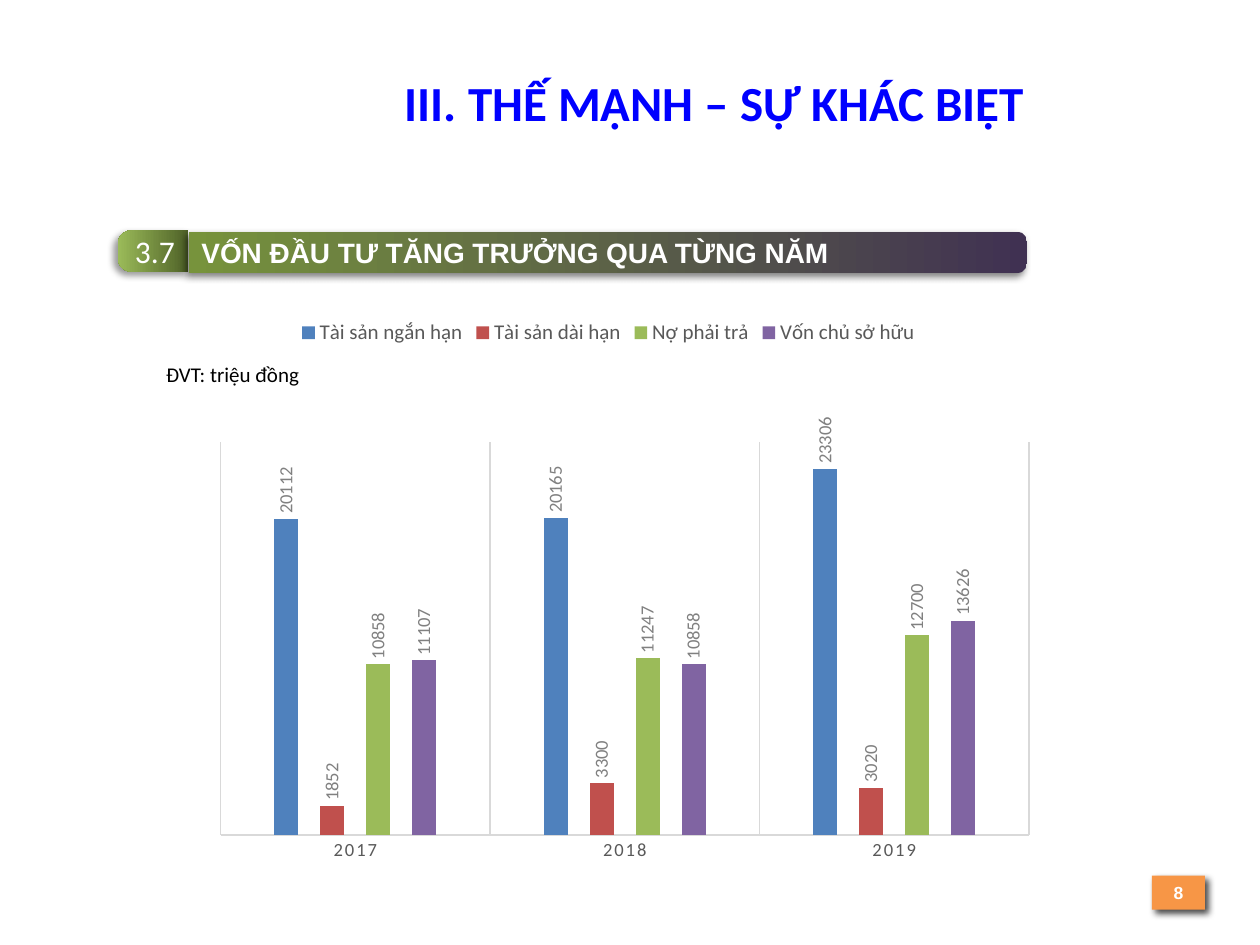
import pptx
import pptx.chart.data
import pptx.dml.color
import pptx.enum.chart
import pptx.enum.shapes
import pptx.enum.text
import pptx.oxml
import pptx.oxml.ns
import pptx.util
from pptx.util import Cm, Pt

COLOURS = {
    "title": "0000FF", "black": "000000", "white": "FFFFFF",
    "dark_green": "4F6228", "green": "9BBB59",
    "purple": "403152", "olive": "77933C", "orange": "F79646",
    "axis_text": "595959", "label_text": "808080", "rule": "D9D9D9",
}
TITLE = "III. THẾ MẠNH – SỰ KHÁC BIỆT"
UNIT = "ĐVT: triệu đồng"
PAGE = "8"
BANNER_HEIGHT = 0.84
BANNERS = [
    dict(text="3.7", left=2.37, top=4.64, length=1.42, turn=270, vert="vert",
         corner=0.347, stops=("dark_green", "green"), opacity=40,
         font=dict(size=18, align="CENTER")),
    dict(text="VỐN ĐẦU TƯ TĂNG TRƯỞNG QUA TỪNG NĂM", left=3.81, top=4.67,
         length=16.89, turn=90, vert="vert270",
         corner=0.233, stops=("purple", "olive"), opacity=50,
         font=dict(size=16, name="Arial", bold=True)),
]
YEARS = ["2017", "2018", "2019"]
CAPITAL = [
    ("Tài sản ngắn hạn", (20112, 20165, 23306), "4F81BD"),
    ("Tài sản dài hạn", (1852, 3300, 3020), "C0504D"),
    ("Nợ phải trả", (10858, 11247, 12700), "9BBB59"),
    ("Vốn chủ sở hữu", (11107, 10858, 13626), "8064A2"),
]
PLOT_AREA = {"x": 0.064, "y": 0.239, "w": 0.909, "h": 0.69}


def rgb(value):
    return pptx.dml.color.RGBColor.from_string(COLOURS.get(value, value))


def style_font(font, size, colour, name="Calibri", bold=False):
    font.size, font.name, font.bold = Pt(size), name, bold
    font.color.rgb = rgb(colour)


def write(shape, text, size, colour="white", name="Calibri", bold=False,
          align="LEFT", anchor="MIDDLE", wrap=True):
    frame = shape.text_frame
    frame.word_wrap = wrap
    frame.auto_size = pptx.enum.text.MSO_AUTO_SIZE.NONE
    frame.vertical_anchor = getattr(pptx.enum.text.MSO_ANCHOR, anchor)
    paragraph = frame.paragraphs[0]
    paragraph.alignment = getattr(pptx.enum.text.PP_ALIGN, align)
    run = paragraph.add_run()
    run.text = text
    style_font(run.font, size, colour, name, bold)


def add_shadow(shape, opacity, direction):
    shape.shadow.inherit = False
    effects = shape._element.spPr.find(pptx.oxml.ns.qn("a:effectLst"))
    effects.append(pptx.oxml.parse_xml(
        f'<a:outerShdw {pptx.oxml.ns.nsdecls("a")} blurRad="{Pt(4)}" dist="{Pt(3)}" '
        f'dir="{direction * 60000}" algn="ctr" rotWithShape="0">'
        f'<a:srgbClr val="{COLOURS["black"]}"><a:alpha val="{opacity * 1000}"/>'
        '</a:srgbClr></a:outerShdw>'))


def add_banner(slide, text, left, top, length, turn, vert, corner, stops, opacity, font):
    """Stand a two-corner shape on its side; left, top and length are as seen."""
    inset = (length - BANNER_HEIGHT) / 2
    banner = slide.shapes.add_shape(
        pptx.enum.shapes.MSO_SHAPE.ROUND_2_SAME_RECTANGLE,
        Cm(left + inset), Cm(top - inset), Cm(BANNER_HEIGHT), Cm(length))
    banner.rotation = turn
    banner.adjustments[0] = corner
    banner.adjustments[1] = 0
    banner.line.fill.background()
    banner.fill.gradient()
    banner.fill.gradient_angle = 360 - turn
    for stop, position, colour in zip(banner.fill.gradient_stops, (0, 1), stops):
        stop.position = position
        stop.color.rgb = rgb(colour)
    add_shadow(banner, opacity, 135)
    write(banner, text, **font)
    frame = banner.text_frame
    frame.margin_left = frame.margin_right = Cm(0.25)
    frame.margin_top = frame.margin_bottom = Cm(0.25)
    frame._txBody.bodyPr.set("vert", vert)


def place_plot_area(chart):
    plot_area = chart._chartSpace.chart.plotArea
    for layout in plot_area.findall(pptx.oxml.ns.qn("c:layout")):
        plot_area.remove(layout)
    modes = '<c:xMode val="edge"/><c:yMode val="edge"/>'
    sizes = "".join(f'<c:{key} val="{value}"/>' for key, value in PLOT_AREA.items())
    plot_area.insert(0, pptx.oxml.parse_xml(
        f'<c:layout {pptx.oxml.ns.nsdecls("c")}><c:manualLayout>'
        f'<c:layoutTarget val="inner"/>{modes}{sizes}</c:manualLayout></c:layout>'))


def add_capital_chart(slide):
    kinds = pptx.enum.chart
    data = pptx.chart.data.CategoryChartData()
    data.categories = YEARS
    for name, values, _ in CAPITAL:
        data.add_series(name, values)
    chart = slide.shapes.add_chart(
        kinds.XL_CHART_TYPE.COLUMN_CLUSTERED,
        Cm(3.3), Cm(6.17), Cm(17.93), Cm(11.48), data).chart
    chart.has_title = False
    style_font(chart.font, 10, "black")

    chart.has_legend = True
    chart.legend.position = kinds.XL_LEGEND_POSITION.TOP
    chart.legend.include_in_layout = False
    style_font(chart.legend.font, 12, "axis_text")

    values_axis = chart.value_axis
    values_axis.minimum_scale, values_axis.maximum_scale = 0, 25000
    values_axis.has_major_gridlines = False
    values_axis.visible = False

    years_axis = chart.category_axis
    years_axis.major_tick_mark = kinds.XL_TICK_MARK.NONE
    years_axis.has_major_gridlines = True
    for line in (years_axis.format.line, years_axis.major_gridlines.format.line):
        line.width = Pt(0.75)
        line.color.rgb = rgb("rule")
    style_font(years_axis.tick_labels.font, 10.6, "axis_text")
    years_axis._element.xpath(".//a:defRPr")[0].set("spc", "120")

    plot = chart.plots[0]
    plot.gap_width, plot.overlap, plot.vary_by_categories = 444, -90, False
    for series, (_, _, colour) in zip(plot.series, CAPITAL):
        series.format.fill.solid()
        series.format.fill.fore_color.rgb = rgb(colour)
        labels = series.data_labels
        labels.show_value = True
        labels.position = kinds.XL_LABEL_POSITION.OUTSIDE_END
        style_font(labels.font, 10.6, "label_text")
        body = labels._element.xpath("./c:txPr/a:bodyPr")[0]
        body.set("rot", "-5400000")
        body.set("vert", "horz")
    place_plot_area(chart)


def main():
    deck = pptx.Presentation()
    deck.slide_width, deck.slide_height = Cm(25.4), Cm(19.05)
    slide = deck.slides.add_slide(deck.slide_layouts[5])

    for banner in BANNERS:
        add_banner(slide, **banner)

    page = slide.shapes.add_shape(pptx.enum.shapes.MSO_SHAPE.RECTANGLE,
                                  Cm(23.22), Cm(17.65), Cm(1.07), Cm(0.69))
    page.fill.solid()
    page.fill.fore_color.rgb = rgb("orange")
    page.line.fill.background()
    add_shadow(page, 73, 45)
    write(page, PAGE, size=10, name="Arial", bold=True, align="CENTER")

    title = slide.shapes.title
    title.left, title.top, title.width, title.height = Cm(5.41), Cm(1.32), Cm(17.98), Cm(1.45)
    write(title, TITLE, size=28, colour="title", bold=True, align="CENTER")

    add_capital_chart(slide)

    unit = slide.shapes.add_textbox(Cm(3.1), Cm(7.16), Cm(3.23), Cm(0.76))
    write(unit, UNIT, size=12, colour="black", anchor="TOP", wrap=False)
    deck.save("out.pptx")


if __name__ == "__main__":
    main()
